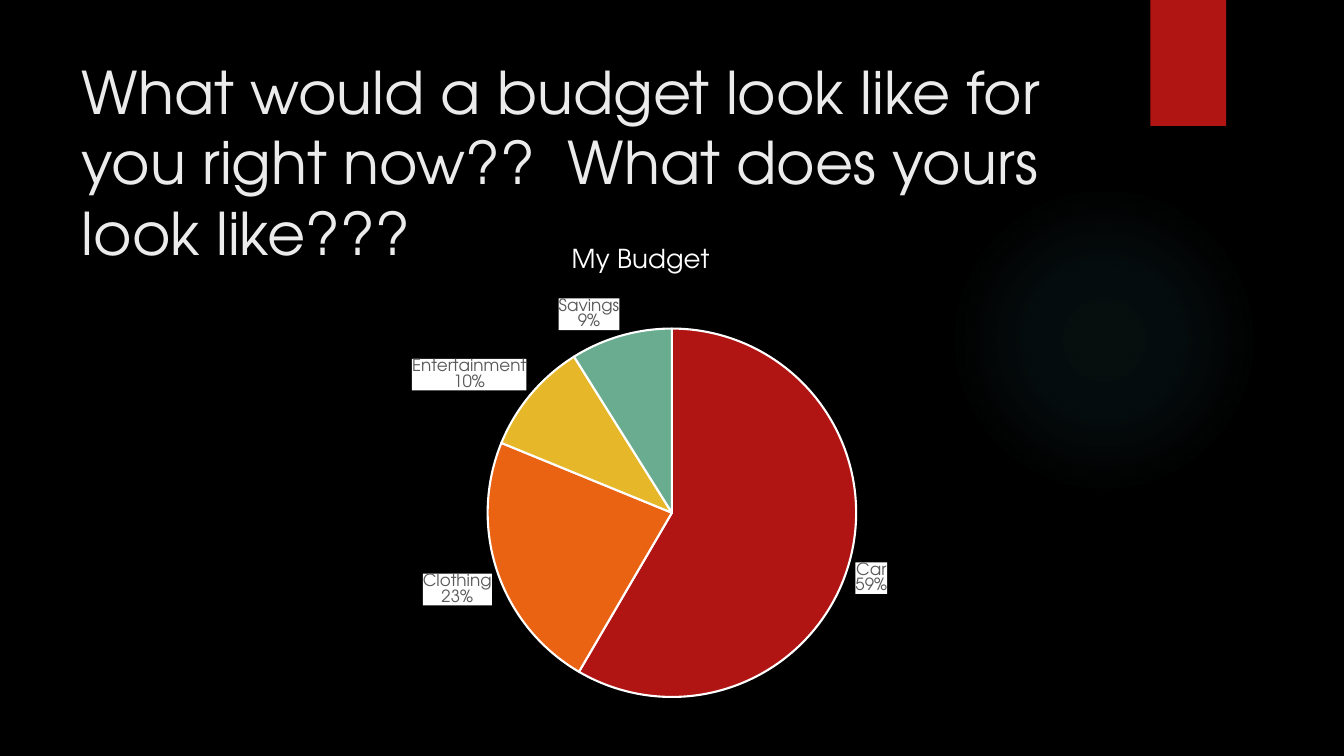
import pptx
import pptx.chart.data
import pptx.dml.color
import pptx.enum.chart
import pptx.enum.shapes
import pptx.enum.text
import pptx.oxml
import pptx.oxml.ns
import pptx.util

BUDGET = {
    "Car": (59, "B01513"),
    "Clothing": (23, "EA6312"),
    "Entertainment": (10, "E6B729"),
    "Savings": (9, "6AAC90"),
}


def color(value):
    return pptx.dml.color.RGBColor.from_string(value)


def apply(target, formats):
    for name, value in formats.items():
        setattr(target, name, value)


def paint(fill, value):
    fill.solid()
    fill.fore_color.rgb = color(value)


def element(tag, content):
    namespaces = pptx.oxml.ns.nsdecls("a", "c")
    return pptx.oxml.parse_xml(f"<{tag} {namespaces}>{content}</{tag}>")


class BudgetSlide:
    typeface = "TeX Gyre Adventor"
    accent = "B01513"
    glow_color = "50B9C1"
    title_color = "EBEBEB"
    label_color = "595959"
    white = "FFFFFF"

    def __init__(self, presentation):
        self.width = presentation.slide_width
        self.height = presentation.slide_height
        self.slide = presentation.slides.add_slide(presentation.slide_layouts[5])
        paint(self.slide.background.fill, "000000")

    def area(self, left, top, width, height):
        return (
            round(self.width * left / 100),
            round(self.height * top / 100),
            round(self.width * width / 100),
            round(self.height * height / 100),
        )

    def style(self, font, size, value):
        apply(font, {"name": self.typeface, "size": pptx.util.Pt(size), "bold": False})
        paint(font.fill, value)

    def title(self, text, area):
        shape = self.slide.shapes.title
        apply(shape, dict(zip(("left", "top", "width", "height"), self.area(*area))))
        frame = shape.text_frame
        apply(frame, {
            "text": text,
            "word_wrap": True,
            "auto_size": pptx.enum.text.MSO_AUTO_SIZE.NONE,
            "vertical_anchor": pptx.enum.text.MSO_ANCHOR.TOP,
        })
        paragraph = frame.paragraphs[0]
        paragraph.alignment = pptx.enum.text.PP_ALIGN.LEFT
        self.style(paragraph.runs[0].font, 42, self.title_color)

    def block(self, kind, value, area):
        shape = self.slide.shapes.add_shape(kind, *self.area(*area))
        shape.shadow.inherit = False
        paint(shape.fill, value)
        shape.line.fill.background()
        return shape

    def glow(self, area):
        shape = self.block(pptx.enum.shapes.MSO_SHAPE.OVAL, self.glow_color, area)
        stops = "".join(
            f'<a:gs pos="{position * 1000}"><a:srgbClr val="{self.glow_color}">'
            f'<a:alpha val="{opacity * 1000}"/></a:srgbClr></a:gs>'
            for position, opacity in ((0, 7), (36, 6), (69, 0), (100, 0))
        )
        gradient = element(
            "a:gradFill",
            f'<a:gsLst>{stops}</a:gsLst><a:path path="circle">'
            '<a:fillToRect l="50000" t="50000" r="50000" b="50000"/></a:path>',
        )
        solid = shape.element.spPr.find(pptx.oxml.ns.qn("a:solidFill"))
        solid.getparent().replace(solid, gradient)

    def pie(self, name, budget, area, plot_area):
        data = pptx.chart.data.CategoryChartData()
        data.categories = list(budget)
        data.add_series(name, [amount for amount, _ in budget.values()])
        chart = self.slide.shapes.add_chart(
            pptx.enum.chart.XL_CHART_TYPE.PIE, *self.area(*area), data
        ).chart
        apply(chart, {"has_legend": False, "has_title": True})
        self.style(chart.font, 10, self.white)
        title = chart.chart_title.text_frame
        title.text = name
        self.style(title.paragraphs[0].runs[0].font, 18.6, self.white)

        plot = chart.plots[0]
        plot.vary_by_categories = True
        for index, (_, value) in enumerate(budget.values()):
            point_format = plot.series[0].points[index].format
            paint(point_format.fill, value)
            paint(point_format.line.fill, self.white)
            point_format.line.width = pptx.util.Pt(1.5)
        self.labels(plot.series[0].data_labels)
        self.place_plot(chart, plot_area)

    def labels(self, labels):
        apply(labels, {
            "show_category_name": True,
            "show_value": True,
            "show_percentage": False,
            "number_format": '0"%"',
            "number_format_is_linked": False,
            "position": pptx.enum.chart.XL_LABEL_POSITION.OUTSIDE_END,
        })
        self.style(labels.font, 12, self.label_color)
        root = labels._element
        background = element(
            "c:spPr",
            f'<a:solidFill><a:srgbClr val="{self.white}"/></a:solidFill>',
        )
        root.find(pptx.oxml.ns.qn("c:txPr")).addprevious(background)
        last_flag = [
            child for child in root
            if child.tag.endswith(("}showPercent", "}showBubbleSize"))
        ][-1]
        last_flag.addnext(element("c:separator", "\n"))

    def place_plot(self, chart, plot_area):
        plot_root = chart._chartSpace.chart.plotArea
        for layout in plot_root.findall(pptx.oxml.ns.qn("c:layout")):
            plot_root.remove(layout)
        modes = '<c:layoutTarget val="inner"/><c:xMode val="edge"/><c:yMode val="edge"/>'
        sizes = "".join(
            f'<c:{side} val="{share}"/>' for side, share in zip("xywh", plot_area)
        )
        plot_root.insert(0, element(
            "c:layout", f"<c:manualLayout>{modes}{sizes}</c:manualLayout>"
        ))


def main():
    presentation = pptx.Presentation()
    apply(presentation, {
        "slide_width": pptx.util.Inches(13.33),
        "slide_height": pptx.util.Inches(7.5),
    })
    page = BudgetSlide(presentation)
    page.glow((70.59, 24.4, 23.1, 41.07))
    page.block(
        pptx.enum.shapes.MSO_SHAPE.RECTANGLE, page.accent, (85.6, 0, 5.63, 16.67)
    )
    page.title(
        "What would a budget look like for you right now??  "
        "What does yours look like???",
        (5.33, 6.67, 77.2, 20.4),
    )
    page.pie("My Budget", BUDGET, (9.08, 30, 77.2, 64.13), (0.35, 0.21, 0.36, 0.76))
    presentation.save("out.pptx")


if __name__ == "__main__":
    main()
